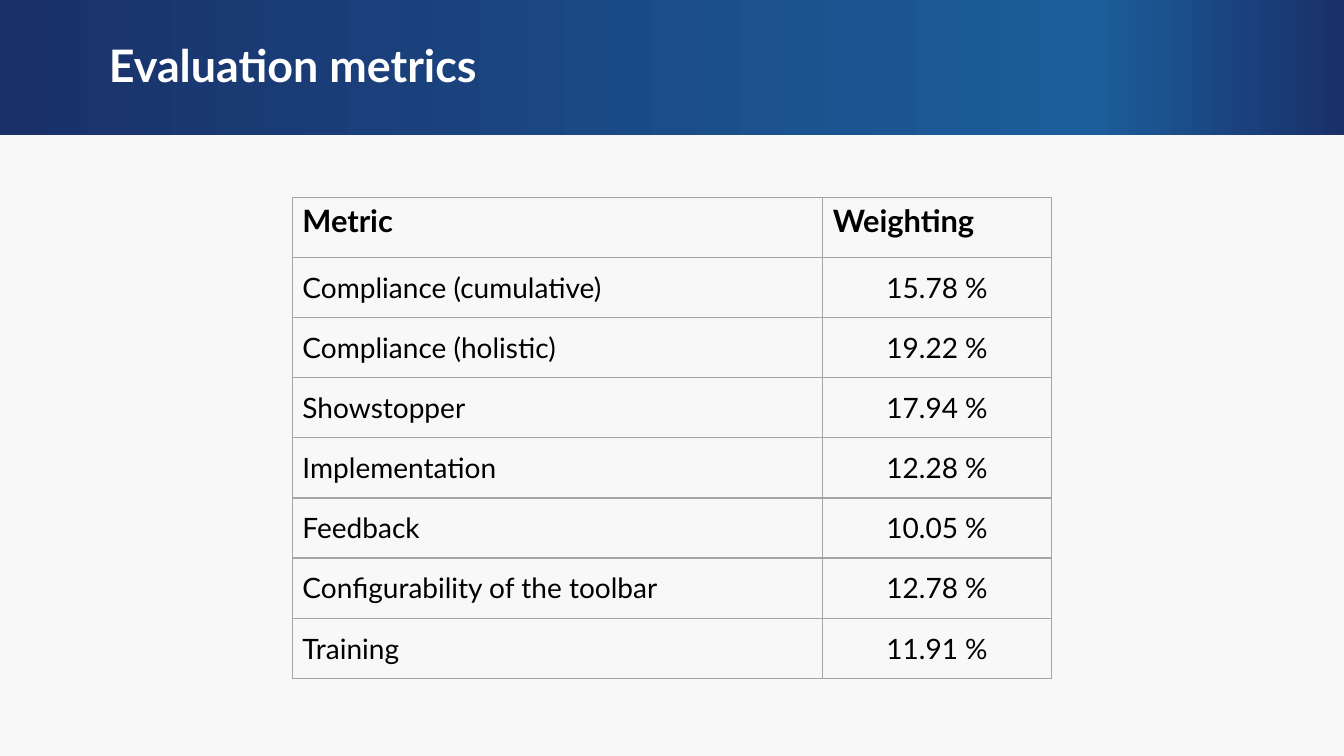
"""Build the evaluation metrics slide."""
from copy import deepcopy
from lxml import etree
from pptx import Presentation
from pptx.dml.color import RGBColor
from pptx.enum import shapes, text
from pptx.oxml.ns import qn
from pptx.util import Inches, Pt

HEAD = "Evaluation metrics"
ROWS = [
    ("Metric", "Weighting"),
    ("Compliance (cumulative)", "15.78 %"),
    ("Compliance (holistic)", "19.22 %"),
    ("Showstopper", "17.94 %"),
    ("Implementation", "12.28 %"),
    ("Feedback", "10.05 %"),
    ("Configurability of the toolbar", "12.78 %"),
    ("Training", "11.91 %"),
]
COLS = [5.26, 2.27]
TALL = 4.77
BAND = 1.34
FONT = "Lato"
HUES = {"back": "F8F8F8", "navy": "1A3069", "blue": "1B5E9B",
        "white": "FFFFFF", "black": "000000", "grid": "A5A5A5"}


def hue(name):
    return RGBColor.from_string(HUES[name])


def write(frame, words, size, color, bold, align):
    para = frame.paragraphs[0]
    para.alignment = align
    run = para.add_run()
    run.text = words
    run.font.name = FONT
    run.font.size = Pt(size)
    run.font.bold = bold
    run.font.color.rgb = hue(color)
    return para


def border(cell):
    props = cell._tc.get_or_add_tcPr()
    for side in ("lnL", "lnR", "lnT", "lnB"):
        line = etree.SubElement(props, qn("a:" + side), w=str(Pt(1)))
        fill = etree.SubElement(line, qn("a:solidFill"))
        etree.SubElement(fill, qn("a:srgbClr"), val=HUES["grid"])


def add_band(slide, wide):
    band = slide.shapes.add_shape(
        shapes.MSO_SHAPE.RECTANGLE, 0, 0, wide, Inches(BAND))
    band.shadow.inherit = False
    band.line.fill.background()
    band.fill.gradient()
    band.fill.gradient_angle = 0
    first = band._element.find(".//" + qn("a:gs"))
    first.addnext(deepcopy(first))
    marks = [(0, "navy"), (0.81, "blue"), (1, "navy")]
    for stop, (place, name) in zip(band.fill.gradient_stops, marks):
        stop.position = place
        stop.color.rgb = hue(name)
    return band


def add_title(slide, band):
    title = slide.shapes.title
    title._element.addprevious(band._element)
    title.left, title.top = Inches(0.98), 0
    title.width, title.height = Inches(6.5), Inches(BAND)
    frame = title.text_frame
    frame.vertical_anchor = text.MSO_ANCHOR.MIDDLE
    para = write(frame, HEAD, 32, "white", True, text.PP_ALIGN.LEFT)
    para.line_spacing = 0.9


def add_grid(slide):
    table = slide.shapes.add_table(
        len(ROWS), len(COLS), Inches(2.9), Inches(1.96),
        Inches(sum(COLS)), Inches(TALL)).table
    table.first_row = table.horz_banding = False
    for col, wide in zip(table.columns, COLS):
        col.width = Inches(wide)
    for r, row in enumerate(ROWS):
        table.rows[r].height = Inches(TALL / len(ROWS))
        top = r == 0
        for c, words in enumerate(row):
            cell = table.cell(r, c)
            border(cell)
            cell.fill.background()
            cell.vertical_anchor = (text.MSO_ANCHOR.TOP if top
                                    else text.MSO_ANCHOR.MIDDLE)
            align = (text.PP_ALIGN.CENTER if c and not top
                     else text.PP_ALIGN.LEFT)
            write(cell.text_frame, words, 22 if top else 20,
                  "black", top, align)


def main():
    deck = Presentation()
    deck.slide_width, deck.slide_height = Inches(13.33), Inches(7.5)
    slide = deck.slides.add_slide(deck.slide_layouts[5])
    slide.background.fill.solid()
    slide.background.fill.fore_color.rgb = hue("back")
    add_title(slide, add_band(slide, deck.slide_width))
    add_grid(slide)
    deck.save("out.pptx")


if __name__ == "__main__":
    main()
